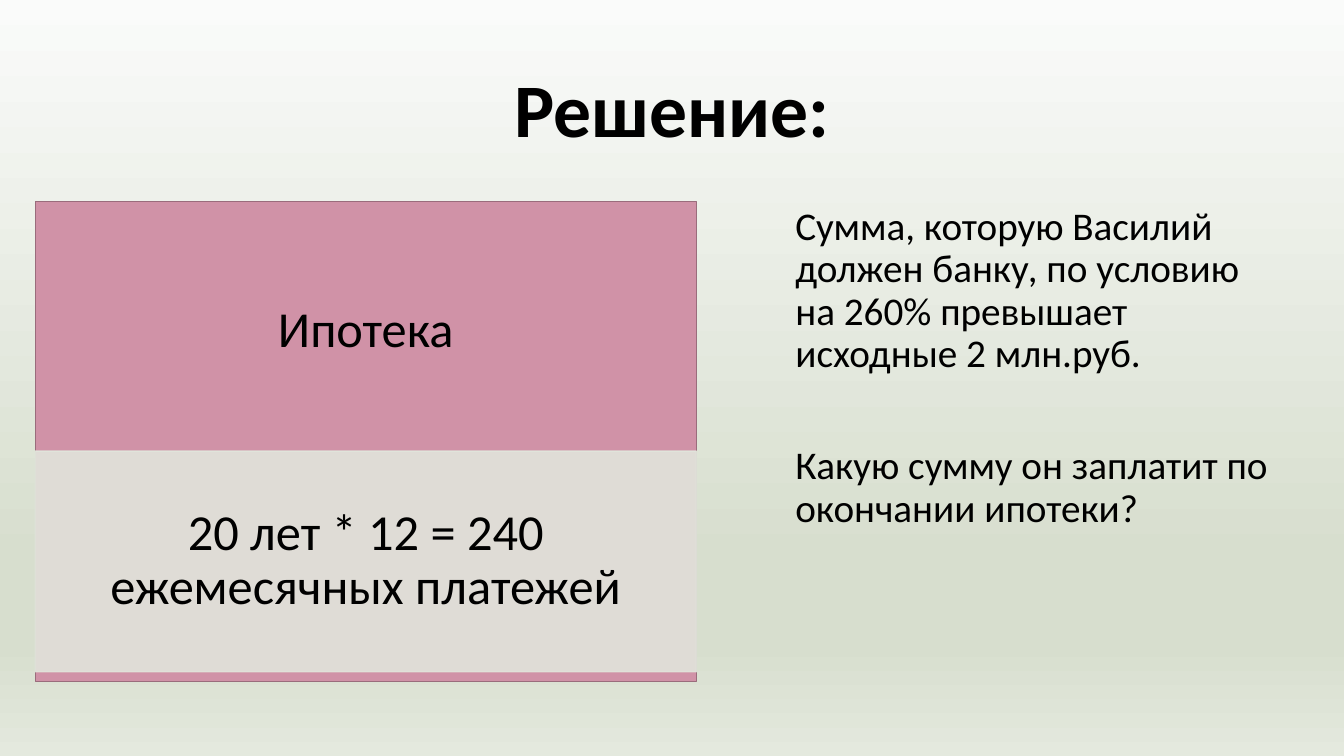
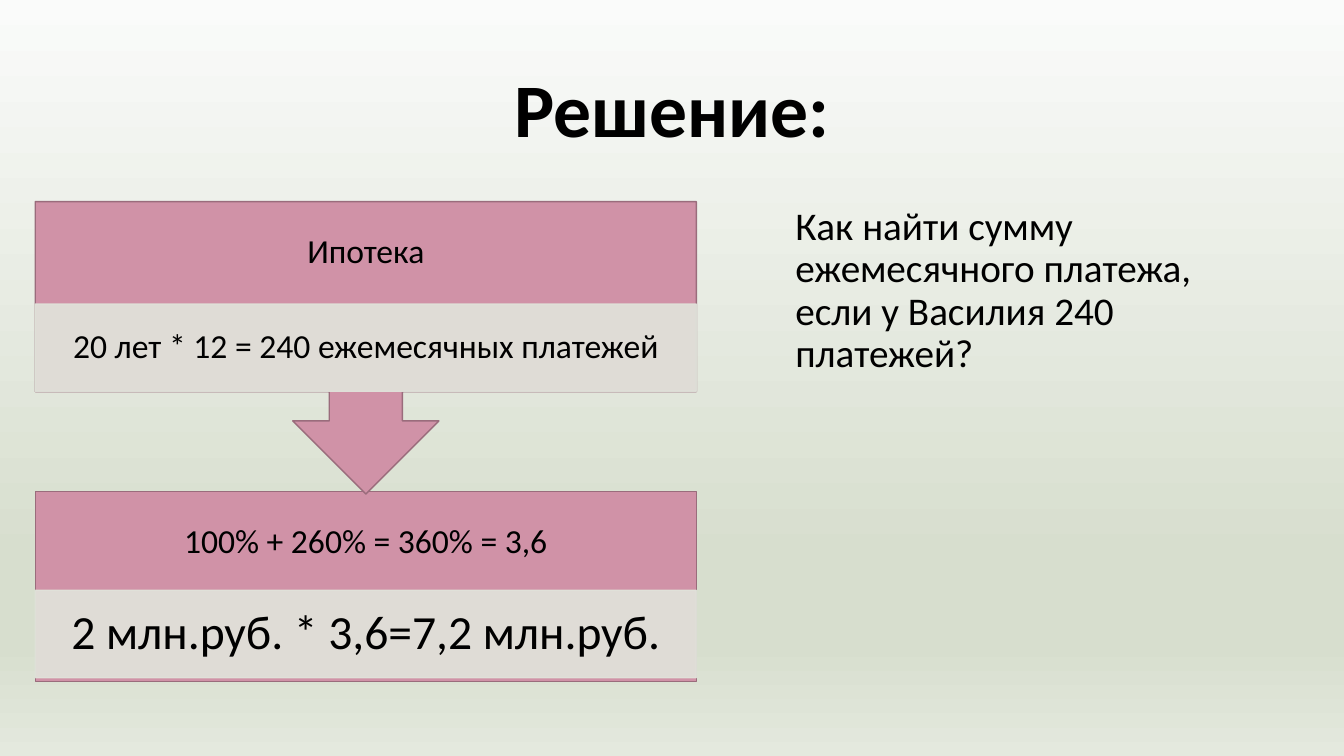
from copy import deepcopy
from dataclasses import dataclass

from lxml import etree
from pptx import Presentation
from pptx.dml.color import RGBColor
from pptx.enum.shapes import MSO_SHAPE
from pptx.enum.text import MSO_ANCHOR, MSO_AUTO_SIZE, PP_ALIGN
from pptx.oxml.ns import qn
from pptx.util import Cm, Pt

RECTANGLE = MSO_SHAPE.RECTANGLE
DOWN_CALLOUT = MSO_SHAPE.DOWN_ARROW_CALLOUT
CENTER, LEFT = PP_ALIGN.CENTER, PP_ALIGN.LEFT
MIDDLE, TOP = MSO_ANCHOR.MIDDLE, MSO_ANCHOR.TOP
NO_AUTOFIT = MSO_AUTO_SIZE.NONE


@dataclass(frozen=True)
class Theme:
    font: str = "Calibri"
    ink: str = "000000"
    panel: str = "D092A7"
    panel_line: str = "9A6C7C"
    strip: str = "E1E5DC"
    strip_opacity: int = 90
    background: tuple = ((0, "FAFBFA"), (0.74, "D7DECE"), (0.85, "D7DECE"), (1, "E4E9DE"))
    title_size: int = 54
    body_size: int = 28
    large_size: int = 36
    medium_size: int = 34
    small_size: int = 24


THEME = Theme()

PANEL_LEFT, PANEL_WIDTH = 0.89, 16.66
CONTENT_TOP, CONTENT_HEIGHT = 5.08, 12.09
STEP_HEIGHT = 4.78
CALLOUT_HEIGHT = 7.37
HEADING_SHARE, STRIP_SHARE = 0.54, 0.46
PANEL_STRIP_START = 0.52


def apply(target, values):
    for name, value in values.items():
        setattr(target, name, value)


class Deck:
    def __init__(self, theme):
        self.theme = theme
        self.presentation = Presentation()
        apply(self.presentation, {"slide_width": Cm(33.87), "slide_height": Cm(19.05)})
        self.slide = None
        self.paint_background()

    def paint_background(self):
        master = self.presentation.slide_master
        fill = master.background.fill
        fill.gradient()
        fill.gradient_angle = 270
        stops = master.element.find(".//" + qn("a:gsLst"))
        while len(stops) < len(self.theme.background):
            stops.append(deepcopy(stops[0]))
        for stop, (position, color) in zip(fill.gradient_stops, self.theme.background):
            stop.position = position
            stop.color.rgb = RGBColor.from_string(color)

    def add_slide(self, title, paragraphs):
        self.slide = self.presentation.slides.add_slide(self.presentation.slide_layouts[1])
        self.title(title)
        self.body(paragraphs)

    def place(self, shape, left, top, width, height):
        apply(shape, {"left": Cm(left), "top": Cm(top), "width": Cm(width), "height": Cm(height)})

    def set_text(self, shape, texts, size, bold=False, align=CENTER, anchor=MIDDLE, before=(0,), **margins):
        frame = shape.text_frame
        apply(frame, {"text": "\n".join(texts), "word_wrap": True, "auto_size": NO_AUTOFIT,
                      "vertical_anchor": anchor, **margins})
        for paragraph, space in zip(frame.paragraphs, before):
            apply(paragraph, {"alignment": align, "line_spacing": 0.9, "space_before": Pt(space)})
            font = paragraph.runs[0].font
            apply(font, {"name": self.theme.font, "size": Pt(size), "bold": bold})
            font.color.rgb = RGBColor.from_string(self.theme.ink)

    def title(self, text):
        shape = self.slide.shapes.title
        self.place(shape, 2.33, 1.01, 29.21, 3.68)
        self.set_text(shape, [text], self.theme.title_size, bold=True)

    def body(self, paragraphs):
        shape = self.slide.placeholders[1]
        self.place(shape, 19.79, CONTENT_TOP, 12.5, CONTENT_HEIGHT)
        self.set_text(shape, paragraphs, self.theme.body_size, align=LEFT, anchor=TOP, before=(10, 50))
        for paragraph in shape.text_frame.paragraphs:
            properties = paragraph._p.get_or_add_pPr()
            properties.set("marL", "0")
            properties.set("indent", "0")
            etree.SubElement(properties, qn("a:buNone"))

    def block(self, kind, top, height, fill, line, opacity=100):
        shape = self.slide.shapes.add_shape(
            kind, Cm(PANEL_LEFT), Cm(top), Cm(PANEL_WIDTH), Cm(height))
        shape.shadow.inherit = False
        shape.fill.solid()
        shape.fill.fore_color.rgb = RGBColor.from_string(fill)
        shape.line.color.rgb = RGBColor.from_string(line)
        shape.line.width = Pt(1)
        if opacity < 100:
            for color in shape._element.spPr.iter(qn("a:srgbClr")):
                etree.SubElement(color, qn("a:alpha")).set("val", str(opacity * 1000))
        return shape

    def step(self, top, box_height, heading, heading_size, result, result_size, callout=False):
        theme = self.theme
        kind, height, strip_start = RECTANGLE, box_height, PANEL_STRIP_START
        if callout:
            kind, height, strip_start = DOWN_CALLOUT, CALLOUT_HEIGHT, HEADING_SHARE
        panel = self.block(kind, top, height, theme.panel, theme.panel_line)
        self.set_text(panel, [heading], heading_size, margin_top=0,
                      margin_bottom=Cm(box_height * (1 - HEADING_SHARE)))
        strip = self.block(RECTANGLE, top + box_height * strip_start, box_height * STRIP_SHARE,
                           theme.strip, theme.strip, theme.strip_opacity)
        self.set_text(strip, [result], result_size, margin_left=Cm(0.5), margin_right=Cm(0.5))


def main():
    deck = Deck(THEME)
    title, loan, payments = "Решение:", "Ипотека", "20 лет * 12 = 240 ежемесячных платежей"

    deck.add_slide(title, [
        "Сумма, которую Василий должен банку, по условию на 260% превышает исходные 2 млн.руб.",
        "Какую сумму он заплатит по окончании ипотеки?",
    ])
    deck.step(CONTENT_TOP, CONTENT_HEIGHT, loan, THEME.large_size, payments, THEME.large_size)

    deck.add_slide(title, ["Как найти сумму ежемесячного платежа, если у Василия 240 платежей?"])
    deck.step(CONTENT_TOP + CONTENT_HEIGHT - STEP_HEIGHT, STEP_HEIGHT,
              "100% + 260% = 360% = 3,6", THEME.small_size,
              "2 млн.руб. * 3,6=7,2 млн.руб.", THEME.medium_size)
    deck.step(CONTENT_TOP, STEP_HEIGHT, loan, THEME.small_size, payments, THEME.small_size,
              callout=True)

    deck.presentation.save("out.pptx")


if __name__ == "__main__":
    main()
